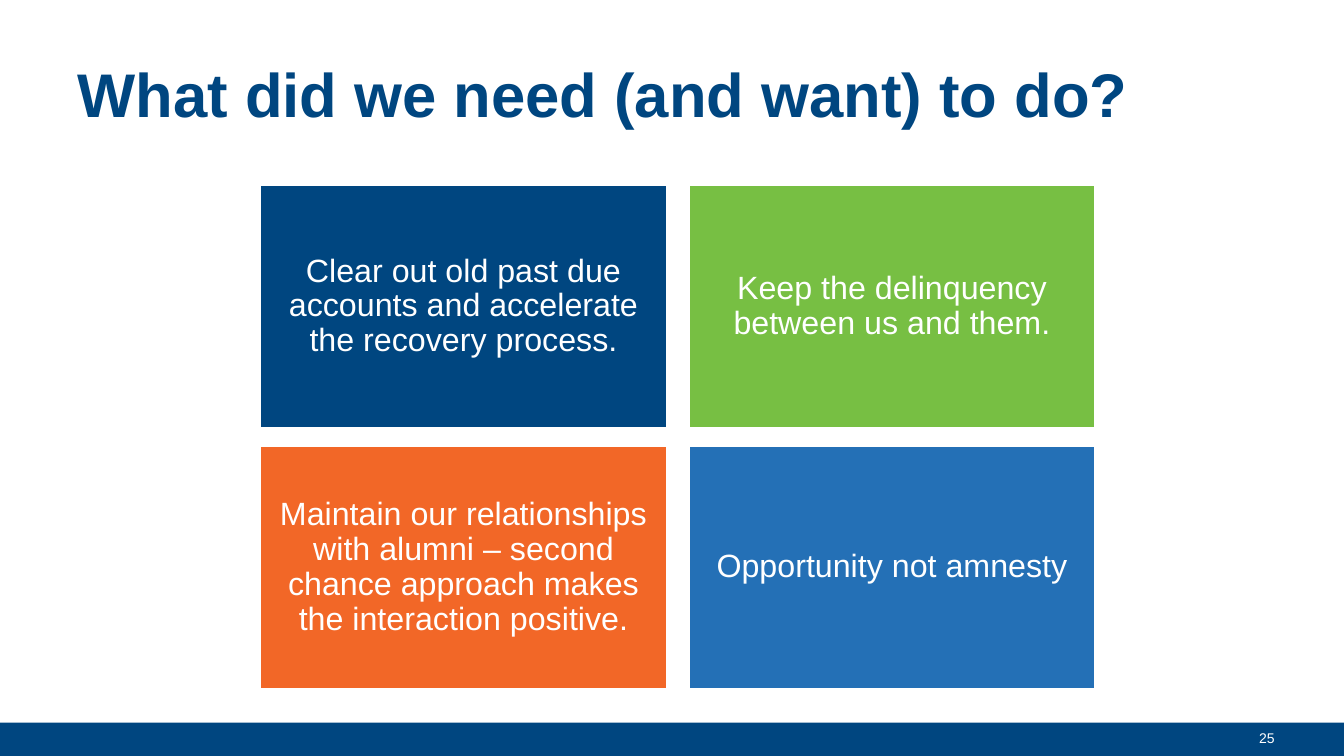
from dataclasses import dataclass

from pptx import Presentation
from pptx.dml.color import RGBColor
from pptx.enum.shapes import MSO_SHAPE
from pptx.enum.text import MSO_ANCHOR, MSO_AUTO_SIZE, PP_ALIGN
from pptx.shapes.autoshape import Shape
from pptx.slide import Slide
from pptx.text.text import Font
from pptx.util import Inches, Pt


@dataclass(frozen=True)
class Theme:
    font: str = "Arial"
    navy: str = "004680"
    green: str = "77BF43"
    orange: str = "F26727"
    blue: str = "2470B6"
    white: str = "FFFFFF"
    title_size: int = 44
    goal_size: int = 23
    number_size: int = 10


@dataclass(frozen=True)
class Goal:
    text: str
    color: str


THEME = Theme()
GOALS = [
    Goal("Clear out old past due accounts and accelerate the recovery process.", THEME.navy),
    Goal("Keep the delinquency between us and them.", THEME.green),
    Goal("Maintain our relationships with alumni – second chance approach "
         "makes the interaction positive.", THEME.orange),
    Goal("Opportunity not amnesty", THEME.blue),
]
COLUMNS = 2
GRID_LEFT, GRID_TOP = 2.58, 1.83
GOAL_WIDTH, GOAL_HEIGHT = 4.04, 2.42
COLUMN_STEP, ROW_STEP = 4.25, 2.59


def style_font(font: Font, size: int, color: str, bold: bool = False) -> None:
    font.name = THEME.font
    font.size = Pt(size)
    font.bold = bold
    font.color.rgb = RGBColor.from_string(color)


def add_block(slide: Slide, left: float, top: float, width: float, height: float,
              color: str) -> Shape:
    """Add a flat filled rectangle without outline or shadow."""
    block = slide.shapes.add_shape(
        MSO_SHAPE.RECTANGLE, Inches(left), Inches(top), Inches(width), Inches(height))
    block.shadow.inherit = False
    block.fill.solid()
    block.fill.fore_color.rgb = RGBColor.from_string(color)
    block.line.fill.background()
    return block


def add_footer(slide: Slide, number: str) -> None:
    add_block(slide, 0, 7.17, 13.33, 0.33, THEME.navy)
    page = slide.shapes.add_textbox(Inches(12.39), Inches(7.19), Inches(0.37), Inches(0.27))
    page.text_frame.word_wrap = False
    page.text_frame.text = number
    style_font(page.text_frame.paragraphs[0].runs[0].font, THEME.number_size, THEME.white)


def add_title(slide: Slide, text: str) -> None:
    title = slide.shapes.title
    title.left, title.top = Inches(0.67), Inches(0.3)
    title.width, title.height = Inches(12), Inches(1.25)
    frame = title.text_frame
    frame.text = text
    frame.auto_size = MSO_AUTO_SIZE.NONE
    frame.vertical_anchor = MSO_ANCHOR.MIDDLE
    heading = frame.paragraphs[0]
    heading.alignment = PP_ALIGN.LEFT
    style_font(heading.runs[0].font, THEME.title_size, THEME.navy, bold=True)


def add_goal(slide: Slide, goal: Goal, index: int) -> None:
    row, column = divmod(index, COLUMNS)
    card = add_block(slide, GRID_LEFT + column * COLUMN_STEP, GRID_TOP + row * ROW_STEP,
                     GOAL_WIDTH, GOAL_HEIGHT, goal.color)
    card.line.color.rgb = RGBColor.from_string(THEME.white)
    card.line.width = Pt(2)
    frame = card.text_frame
    frame.word_wrap = True
    frame.vertical_anchor = MSO_ANCHOR.MIDDLE
    frame.margin_left = frame.margin_right = Inches(0.1)
    frame.margin_top = frame.margin_bottom = Inches(0.1)
    frame.text = goal.text
    statement = frame.paragraphs[0]
    statement.alignment = PP_ALIGN.CENTER
    statement.line_spacing = 0.9
    style_font(statement.runs[0].font, THEME.goal_size, THEME.white)


def main() -> None:
    deck = Presentation()
    deck.slide_width, deck.slide_height = Inches(13.33), Inches(7.5)
    slide = deck.slides.add_slide(deck.slide_layouts.get_by_name("Title Only"))
    add_footer(slide, "25")
    add_title(slide, "What did we need (and want) to do?")
    for index, goal in enumerate(GOALS):
        add_goal(slide, goal, index)
    deck.save("out.pptx")


if __name__ == "__main__":
    main()
